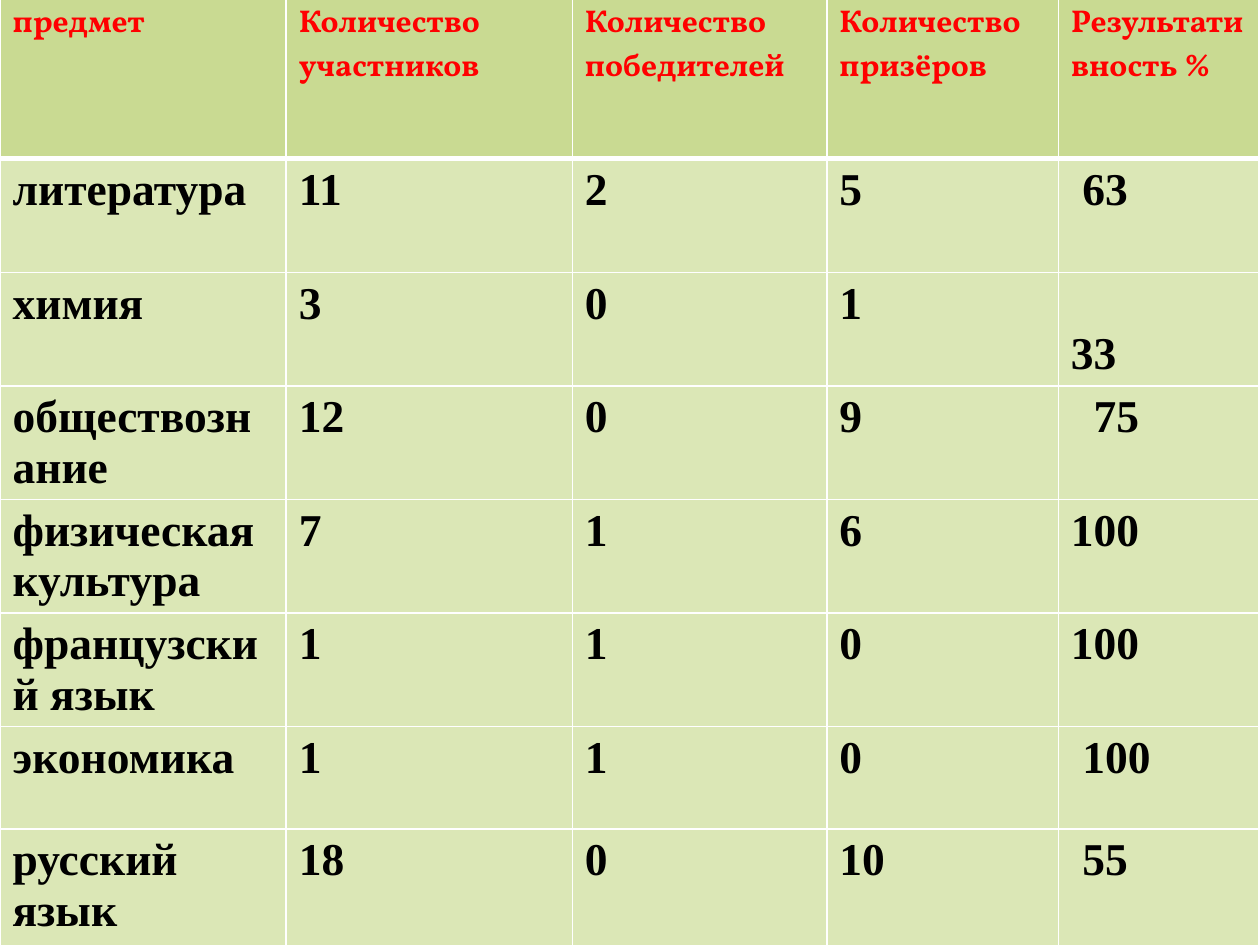
from lxml import etree
from pptx import Presentation
from pptx import util as u
from pptx.dml import color
from pptx.enum import text
from pptx.oxml import ns

BLACK = color.RGBColor(0x00, 0x00, 0x00)
WHITE = color.RGBColor(0xFF, 0xFF, 0xFF)
RED = color.RGBColor(0xFF, 0x00, 0x00)
HEADER_GREEN = color.RGBColor(0xC9, 0xDA, 0x92)
BODY_GREEN = color.RGBColor(0xDB, 0xE7, 0xB6)

HEADER_FONT = {"name": "Vollkorn", "size": u.Pt(18), "bold": True}
BODY_FONT = {"name": "Times New Roman", "size": u.Pt(26), "bold": True}
SPACE_WIDTH = 0.23

HEADERS = [
    "предмет",
    "Количество участников",
    "Количество победителей",
    "Количество\nпризёров",
    "Результативность %",
]
RESULTS = [
    ("литература", 11, 2, 5, 63),
    ("химия", 3, 0, 1, 33),
    ("обществознание", 12, 0, 9, 75),
    ("физическая культура", 7, 1, 6, 100),
    ("французский язык", 1, 1, 0, 100),
    ("экономика", 1, 1, 0, 100),
    ("русский язык", 18, 0, 10, 55),
]
PERCENT_INDENTS = {"литература": 1, "обществознание": 2, "экономика": 1, "русский язык": 1}
COLUMN_WIDTHS = [5.77, 5.77, 5.13, 4.67, 4.04]
ROW_HEIGHTS = [3.28] + [2.29] * 5 + [2.06, 2.36]


class SlideBuilder:
    def __init__(self, slide):
        self.slide = slide

    def background(self, fill_color):
        fill = self.slide.background.fill
        fill.solid()
        fill.fore_color.rgb = fill_color

    def table(self, left, top, widths, heights):
        frame = self.slide.shapes.add_table(
            len(heights), len(widths), u.Cm(left), u.Cm(top),
            u.Cm(sum(widths)), u.Cm(sum(heights)))
        table = frame.table
        table.first_row = table.horz_banding = False
        for column, width in zip(table.columns, widths):
            column.width = u.Cm(width)
        for row, height in zip(table.rows, heights):
            row.height = u.Cm(height)
        return table

    def cell(self, cell, content, font, font_color, fill_color, borders):
        cell.text = content
        for paragraph in cell.text_frame.paragraphs:
            for run in paragraph.runs:
                for name, value in font.items():
                    setattr(run.font, name, value)
                run.font.color.rgb = font_color
        cell.fill.solid()
        cell.fill.fore_color.rgb = fill_color
        self.borders(cell, borders)

    def borders(self, cell, widths):
        properties = cell._tc.get_or_add_tcPr()
        for position, (side, points) in enumerate(widths.items()):
            line = etree.Element(ns.qn(f"a:ln{side}"), w=str(u.Pt(points)))
            fill = etree.SubElement(line, ns.qn("a:solidFill"))
            etree.SubElement(fill, ns.qn("a:srgbClr"), val=str(WHITE))
            properties.insert(position, line)


def main():
    presentation = Presentation()
    presentation.slide_width = u.Cm(25.4)
    presentation.slide_height = u.Cm(19.05)
    builder = SlideBuilder(presentation.slides.add_slide(presentation.slide_layouts[6]))
    builder.background(BLACK)
    table = builder.table(0, -0.08, COLUMN_WIDTHS, ROW_HEIGHTS)

    for column, header in enumerate(HEADERS):
        builder.cell(table.cell(0, column), header, HEADER_FONT, RED, HEADER_GREEN,
                     {"L": 1, "R": 1, "T": 1, "B": 3})
    for row, result in enumerate(RESULTS, 1):
        borders = {"L": 1, "R": 1, "T": 3 if row == 1 else 1, "B": 1}
        for column, value in enumerate(result):
            builder.cell(table.cell(row, column), str(value), BODY_FONT, BLACK,
                         BODY_GREEN, borders)
        subject = result[0]
        percent = table.cell(row, len(result) - 1)
        percent.margin_left = u.Cm(0.25 + SPACE_WIDTH * PERCENT_INDENTS.get(subject, 0))
        if subject == "химия":
            percent.vertical_anchor = text.MSO_ANCHOR.BOTTOM

    presentation.save("out.pptx")


if __name__ == "__main__":
    main()
